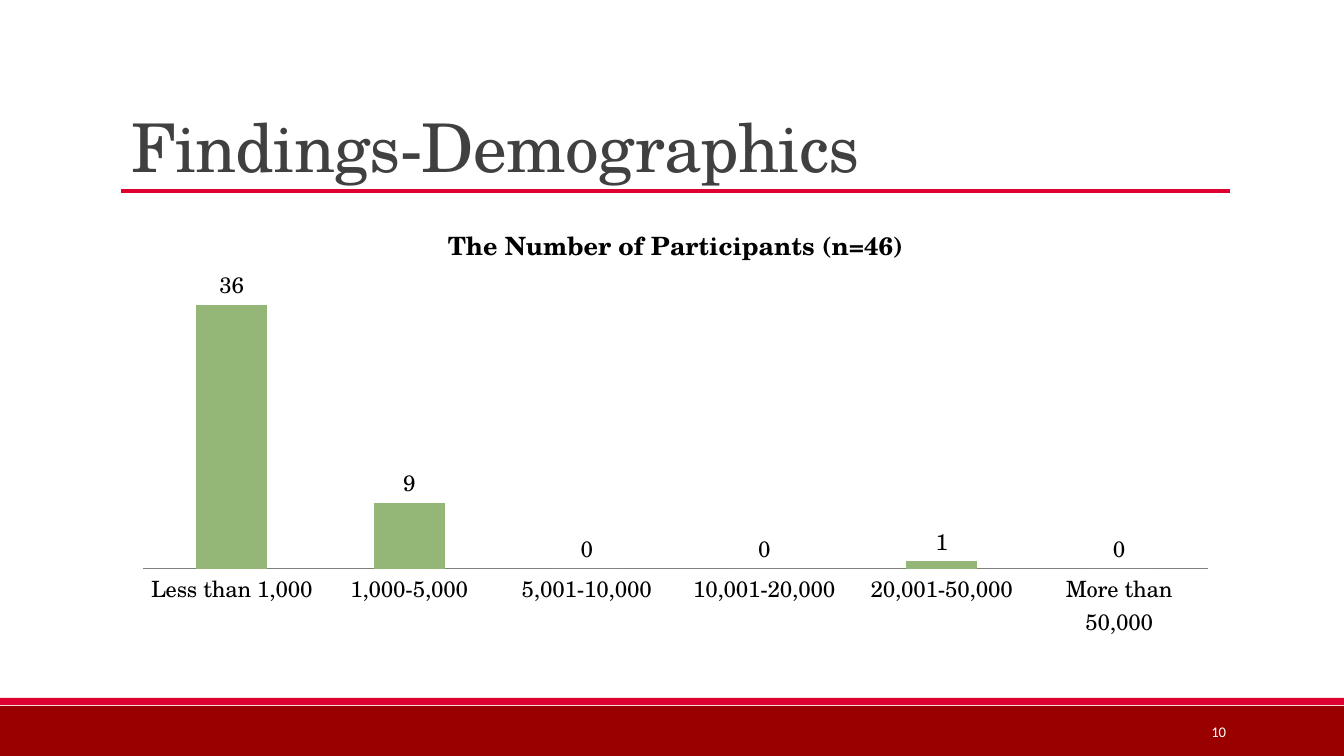
import pptx
import pptx.chart.data
import pptx.dml.color
import pptx.enum.chart
import pptx.enum.shapes
import pptx.enum.text
import pptx.oxml
import pptx.oxml.ns
import pptx.util
from lxml import etree

TITLE = "Findings-Demographics"
CHART_TITLE = "The Number of Participants (n=46)"
PARTICIPANTS = {
    "Less than 1,000": 36,
    "1,000-5,000": 9,
    "5,001-10,000": 0,
    "10,001-20,000": 0,
    "20,001-50,000": 1,
    "More than 50,000": 0,
}
PAGE_NUMBER = "10"

COLORS = {
    "footer": "990000",
    "accent": "DD0031",
    "title": "404040",
    "bar": "94B777",
    "axis": "808080",
    "text": "000000",
    "page": "FFFFFF",
}
SERIF, SANS = "TeX Gyre Schola", "Calibri"

# Boxes in px: left, top, width, height
SLIDE_SIZE = (1344, 756)
FOOTER_BANDS = [("footer", (0, 706, 1344, 50)), ("accent", (0, 698, 1344, 7))]
TITLE_BOX = (121, 31, 1109, 160)
RULE = (121, 191, 1230, 191)
CHART_BOX = (121, 204, 1109, 444)
PLOT_BOX = (143, 276, 1065, 293)
PAGE_BOX = (1092, 712, 144, 40)
PX = 914400 / 100.8


def emu(lengths):
    return [pptx.util.Emu(round(length * PX)) for length in lengths]


def rgb(name):
    return pptx.dml.color.RGBColor.from_string(COLORS[name])


def style_font(font, name, size, color, bold=False):
    font.name, font.size, font.bold = name, pptx.util.Pt(size), bold
    font.color.rgb = rgb(color)


def add_footer_and_rule(slide):
    for color, box in FOOTER_BANDS:
        band = slide.shapes.add_shape(
            pptx.enum.shapes.MSO_SHAPE.RECTANGLE, *emu(box))
        band.shadow.inherit = False
        band.fill.solid()
        band.fill.fore_color.rgb = rgb(color)
        band.line.fill.background()
    rule = slide.shapes.add_connector(
        pptx.enum.shapes.MSO_CONNECTOR.STRAIGHT, *emu(RULE))
    rule.line.color.rgb = rgb("accent")
    rule.line.width = pptx.util.Pt(2.5)
    etree.SubElement(rule._element.spPr, pptx.oxml.ns.qn("a:effectLst"))


def add_title(slide):
    title = slide.shapes.title
    title.left, title.top, title.width, title.height = emu(TITLE_BOX)
    frame = title.text_frame
    frame.text = TITLE
    frame.auto_size = pptx.enum.text.MSO_AUTO_SIZE.NONE
    frame.vertical_anchor = pptx.enum.text.MSO_ANCHOR.BOTTOM
    paragraph = frame.paragraphs[0]
    paragraph.alignment = pptx.enum.text.PP_ALIGN.LEFT
    paragraph.line_spacing = 0.85
    style_font(paragraph.font, SERIF, 48, "title")
    paragraph.runs[0].font._element.set("spc", "-50")


def fix_plot_area(chart):
    """Give the inner plot area its place as fractions of the chart."""
    left, top, width, height = CHART_BOX
    plot_left, plot_top, plot_width, plot_height = PLOT_BOX
    settings = [
        ("layoutTarget", "inner"), ("xMode", "edge"), ("yMode", "edge"),
        ("x", (plot_left - left) / width), ("y", (plot_top - top) / height),
        ("w", plot_width / width), ("h", plot_height / height),
    ]
    qn = pptx.oxml.ns.qn
    plot_area = chart._chartSpace.chart.plotArea
    for layout in plot_area.findall(qn("c:layout")):
        plot_area.remove(layout)
    layout = etree.Element(qn("c:layout"))
    manual = etree.SubElement(layout, qn("c:manualLayout"))
    for tag, value in settings:
        etree.SubElement(manual, qn("c:" + tag)).set("val", str(value))
    plot_area.insert(0, layout)


def add_participant_chart(slide):
    data = pptx.chart.data.CategoryChartData()
    data.categories = list(PARTICIPANTS)
    data.add_series("Series 1", list(PARTICIPANTS.values()))
    chart = slide.shapes.add_chart(
        pptx.enum.chart.XL_CHART_TYPE.COLUMN_CLUSTERED,
        *emu(CHART_BOX), data).chart
    style_font(chart.font, SANS, 10, "text")
    chart.has_legend = False
    chart.has_title = True
    chart.chart_title.include_in_layout = False
    chart.chart_title.text_frame.text = CHART_TITLE
    heading = chart.chart_title.text_frame.paragraphs[0]
    style_font(heading.font, SERIF, 18, "text", bold=True)

    category_axis, value_axis = chart.category_axis, chart.value_axis
    category_axis.major_tick_mark = pptx.enum.chart.XL_TICK_MARK.NONE
    category_axis.format.line.color.rgb = rgb("axis")
    style_font(category_axis.tick_labels.font, SERIF, 16, "text")
    value_axis.minimum_scale, value_axis.maximum_scale = 0, 40
    value_axis.has_major_gridlines = False
    value_axis.visible = False

    plot = chart.plots[0]
    plot.gap_width, plot.overlap = 150, -25
    plot.vary_by_categories = False
    series = plot.series[0]
    series.format.fill.solid()
    series.format.fill.fore_color.rgb = rgb("bar")
    labels = series.data_labels
    labels.show_value = True
    labels.position = pptx.enum.chart.XL_LABEL_POSITION.OUTSIDE_END
    style_font(labels.font, SERIF, 16, "text")
    fix_plot_area(chart)


def add_page_number(slide):
    frame = slide.shapes.add_textbox(*emu(PAGE_BOX)).text_frame
    frame.word_wrap = True
    frame.vertical_anchor = pptx.enum.text.MSO_ANCHOR.MIDDLE
    frame.text = PAGE_NUMBER
    paragraph = frame.paragraphs[0]
    paragraph.alignment = pptx.enum.text.PP_ALIGN.RIGHT
    style_font(paragraph.font, SANS, 10.5, "page")


def main():
    presentation = pptx.Presentation()
    presentation.slide_width, presentation.slide_height = emu(SLIDE_SIZE)
    title_only = presentation.slide_layouts.get_by_name("Title Only")
    slide = presentation.slides.add_slide(title_only)
    add_footer_and_rule(slide)
    add_title(slide)
    add_participant_chart(slide)
    add_page_number(slide)
    presentation.save("out.pptx")


if __name__ == "__main__":
    main()
